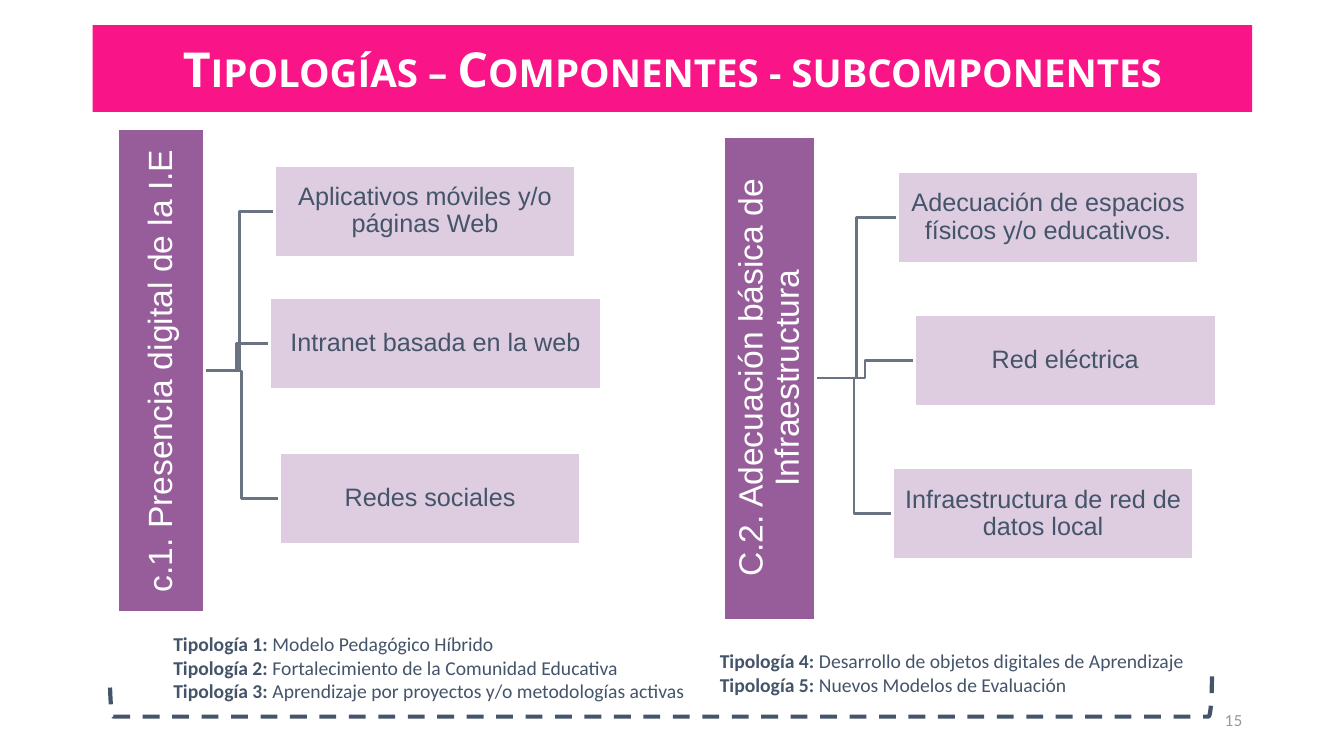
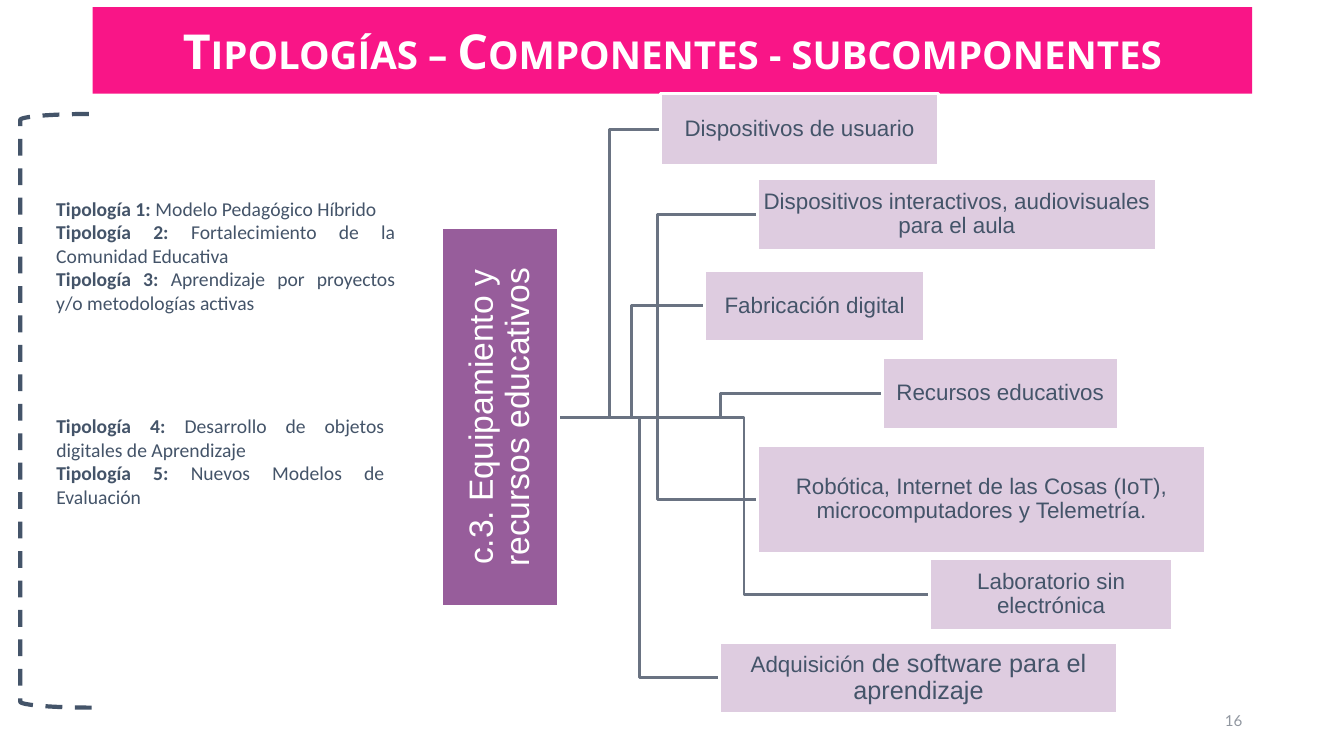
from lxml.etree import SubElement
from pptx import Presentation
from pptx.dml.color import RGBColor
from pptx.enum.dml import MSO_LINE
from pptx.enum.shapes import MSO_CONNECTOR, MSO_SHAPE
from pptx.enum.text import MSO_ANCHOR, PP_ALIGN
from pptx.oxml.ns import qn
from pptx.util import Inches, Pt

COLORS = {
    "band": "F91587",
    "component": "7D3583",
    "subcomponent": "D0B6D3",
    "branch": "6A7382",
    "text": "445469",
    "page": "9197A0",
    "white": "FFFFFF",
}
HEADING = "Tipologías – Componentes - subcomponentes"
TYPOLOGIES = {
    1: "Modelo Pedagógico Híbrido",
    2: "Fortalecimiento de la Comunidad Educativa",
    3: "Aprendizaje por proyectos y/o metodologías activas",
    4: "Desarrollo de objetos digitales de Aprendizaje",
    5: "Nuevos Modelos de Evaluación",
}


def rgb(name):
    return RGBColor.from_string(COLORS[name])


class Deck:
    """Holds the shared style and the slide being built."""

    def __init__(self):
        self.prs = Presentation()
        self.prs.slide_width, self.prs.slide_height = Inches(13.33), Inches(7.5)
        self.shapes = None

    def new_slide(self, number, band_top):
        self.shapes = self.prs.slides.add_slide(self.prs.slide_layouts[6]).shapes
        # Title band
        band = self.shape(MSO_SHAPE.RECTANGLE, (0.92, band_top, 11.5, 0.86), "band")
        paragraph = self.frame(band, 0.1, 0)
        title = self.run(paragraph, HEADING, 34.4, "Open Sans", "white", bold=True)
        title.font._element.set("cap", "small")
        # Page number
        page = self.text_box((9.42, 6.95, 3, 0.4))
        paragraph = self.frame(page, 0.1, 0.05, PP_ALIGN.RIGHT)
        self.run(paragraph, str(number), 10.8, "Lato", "page")

    def shape(self, kind, area, fill=None, opacity=100, rotation=0):
        """Place a shape so that it covers the area once it is rotated."""
        left, top, width, height = area
        if rotation in (90, 270):
            left, top = left + (width - height) / 2, top + (height - width) / 2
            width, height = height, width
        shape = self.shapes.add_shape(kind, *map(Inches, (left, top, width, height)))
        shape.rotation = rotation
        shape.shadow.inherit = False
        shape.line.fill.background()
        if fill is None:
            shape.fill.background()
            return shape
        shape.fill.solid()
        shape.fill.fore_color.rgb = rgb(fill)
        if opacity < 100:
            color = shape.fill._xPr.find(qn("a:solidFill"))[0]
            SubElement(color, qn("a:alpha")).set("val", str(opacity * 1000))
        return shape

    def text_box(self, area):
        return self.shapes.add_textbox(*map(Inches, area))

    def frame(self, shape, side, edge, align=PP_ALIGN.CENTER, anchor=MSO_ANCHOR.MIDDLE):
        """Set up the text frame and return its first paragraph."""
        frame = shape.text_frame
        frame.word_wrap = True
        frame.vertical_anchor = anchor
        frame.margin_left = frame.margin_right = Inches(side)
        frame.margin_top = frame.margin_bottom = Inches(edge)
        frame.paragraphs[0].alignment = align
        return frame.paragraphs[0]

    def run(self, paragraph, text, size, font, color, bold=False):
        run = paragraph.add_run()
        run.text = text
        run.font.size, run.font.name, run.font.bold = Pt(size), font, bold
        run.font.color.rgb = rgb(color)
        return run

    def label(self, area, runs, fill, opacity, color, inset, rotation=0):
        """Translucent box with a white outline and centred text."""
        box = self.shape(MSO_SHAPE.RECTANGLE, area, fill, opacity, rotation)
        self.outline(box.line, "white", 2)
        paragraph = self.frame(box, inset, inset)
        paragraph.line_spacing = 0.9
        for text, size in runs:
            self.run(paragraph, text, size, "Arial", color)

    def outline(self, line, color, width):
        line.color.rgb = rgb(color)
        line.width = Pt(width)

    def branch(self, start, end):
        elbow = self.shapes.add_connector(MSO_CONNECTOR.ELBOW, *map(Inches, start + end))
        self.outline(elbow.line, "branch", 2)
        SubElement(elbow._element.spPr, qn("a:effectLst"))

    def tree(self, component, area, subcomponents):
        """A vertical component bar that branches to its subcomponents."""
        left, top, width, height = area
        trunk = (left + width, top + height / 2)
        for (x, y, _, h), _ in reversed(subcomponents):
            self.branch(trunk, (x, y + h / 2))
        self.label(area, [(component, 24)], "component", 80, "white", 0.02, 270)
        for box, runs in subcomponents:
            self.label(box, runs, "subcomponent", 69, "text", 0.01)

    def bracket(self, area, rotation):
        bracket = self.shape(MSO_SHAPE.RIGHT_BRACKET, area, rotation=rotation)
        self.outline(bracket.line, "text", 3)
        bracket.line.dash_style = MSO_LINE.DASH

    def typologies(self, area, numbers):
        box = self.text_box(area)
        paragraph = self.frame(box, 0.1, 0.05, PP_ALIGN.JUSTIFY, MSO_ANCHOR.TOP)
        for position, number in enumerate(numbers):
            if position:
                paragraph = box.text_frame.add_paragraph()
                paragraph.alignment = PP_ALIGN.JUSTIFY
            self.run(paragraph, f"Tipología {number}: ", 14, "Calibri", "text", bold=True)
            self.run(paragraph, TYPOLOGIES[number], 14, "Calibri", "text")


def main():
    deck = Deck()

    # Components 1 and 2
    deck.new_slide(15, 0.25)
    deck.tree("c.1. Presencia digital de la I.E", (1.17, 1.28, 0.86, 4.8), [
        ((2.72, 1.64, 2.99, 0.91), [("Aplicativos móviles y/o páginas Web", 18)]),
        ((2.67, 2.95, 3.3, 0.91), [("Intranet basada en la web", 18)]),
        ((2.77, 4.49, 2.99, 0.91), [("Redes sociales", 18)]),
    ])
    deck.tree("C.2. Adecuación básica de Infraestructura", (7.18, 1.35, 0.91, 4.8), [
        ((8.9, 1.7, 2.99, 0.91), [("Adecuación de espacios físicos y/o educativos.", 18)]),
        ((9.07, 3.12, 2.99, 0.91), [("Red eléctrica", 18)]),
        ((8.85, 4.64, 2.99, 0.91), [("Infraestructura de red de datos local", 18)]),
    ])
    deck.bracket((1.09, 6.71, 10.93, 0.4), 90)
    deck.typologies((1.62, 6.22, 5.52, 1.28), (1, 2, 3))
    deck.typologies((7.04, 6.39, 4.98, 0.81), (4, 5))

    # Component 3
    deck.new_slide(16, 0.07)
    deck.tree("c.3. Equipamiento y recursos educativos", (4.38, 2.26, 1.16, 3.76), [
        ((6.55, 0.93, 2.76, 0.71), [("Dispositivos de usuario", 16)]),
        ((7.51, 1.77, 3.96, 0.71),
         [("Dispositivos interactivos, audiovisuales para el aula", 16)]),
        ((6.99, 2.68, 2.18, 0.71), [("Fabricación digital", 16)]),
        ((8.75, 3.55, 2.34, 0.71), [("Recursos educativos", 16)]),
        ((7.51, 4.42, 4.45, 1.07),
         [("Robótica, Internet de las Cosas (IoT), microcomputadores y Telemetría.", 16)]),
        ((7.14, 6.37, 3.94, 0.71),
         [("Adquisición", 16), (" de software para el aprendizaje", 18)]),
        ((9.22, 5.54, 2.41, 0.71), [("Laboratorio sin electrónica", 16)]),
    ])
    deck.bracket((0.2, 1.13, 0.71, 5.89), 180)
    deck.typologies((0.46, 1.9, 3.56, 1.75), (1, 2, 3))
    deck.typologies((0.46, 4.06, 3.45, 1.28), (4, 5))

    deck.prs.save("out.pptx")


if __name__ == "__main__":
    main()
